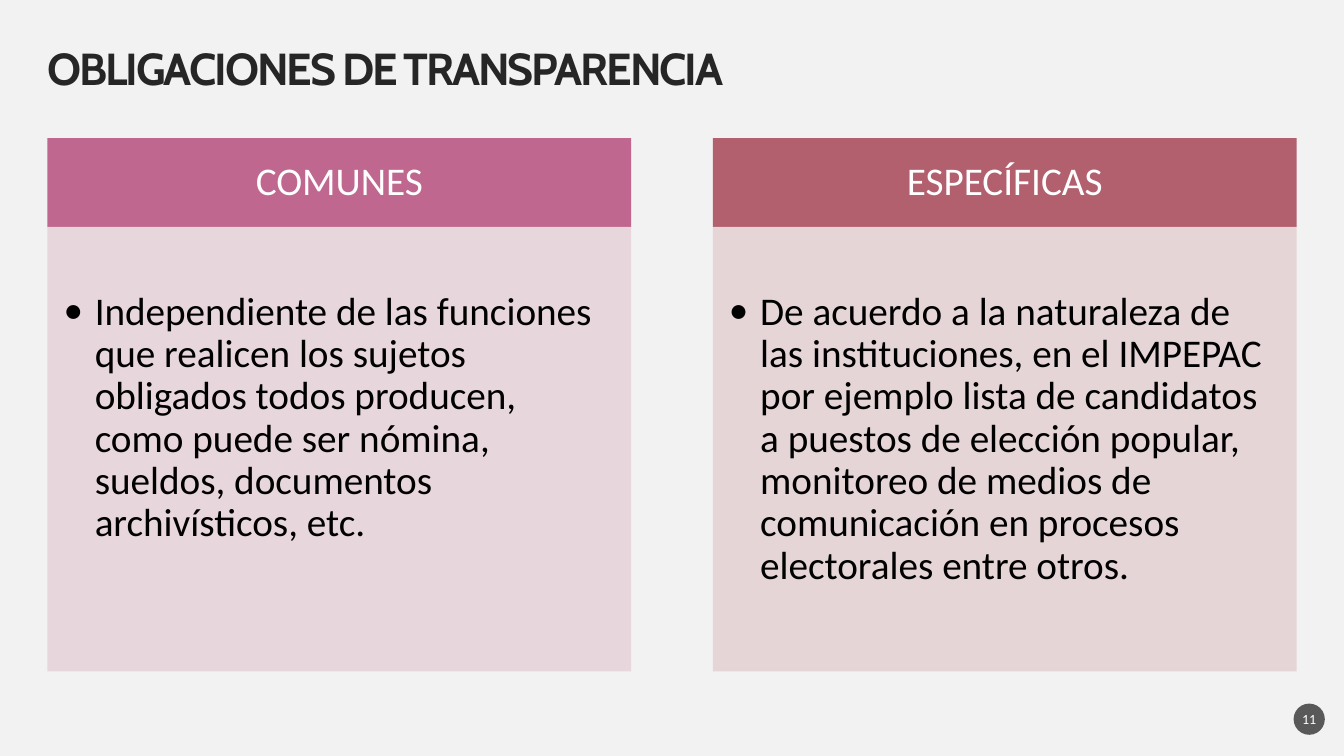
from pptx import Presentation
from pptx.dml.color import RGBColor
from pptx.enum.shapes import MSO_SHAPE as SHAPE
from pptx.enum.text import MSO_ANCHOR as ANCHOR, MSO_AUTO_SIZE as AUTO, PP_ALIGN as ALIGN
from pptx.oxml.ns import qn
from pptx.util import Inches, Pt
from lxml.etree import SubElement

COLORS = {
    "bg": "F2F2F2", "title": "262626", "white": "FFFFFF", "text": "000000",
    "badge": "595959", "pink": "BF678E", "pink_light": "E8D3DB",
    "red": "B2606E", "red_light": "E4D2D5",
}

# Grid: two columns, a title row, a header row and a body row
LEFT, COL_W, PITCH = 0.47, 5.79, 6.6
TITLE_ROW, HEAD_ROW, BODY_ROW = (0.47, 0.47), (1.37, 0.88), (2.25, 4.41)

PANELS = [
    ("COMUNES", "pink",
     "Independiente de las funciones que realicen los sujetos obligados todos "
     "producen, como puede ser nómina, sueldos, documentos archivísticos, etc."),
    ("ESPECÍFICAS", "red",
     "De acuerdo a la naturaleza de las instituciones, en el IMPEPAC por ejemplo "
     "lista de candidatos a puestos de elección popular, monitoreo de medios de "
     "comunicación en procesos electorales entre otros."),
]


class Deck:
    def __init__(self):
        self.prs = Presentation()
        self.prs.slide_width, self.prs.slide_height = Inches(13.33), Inches(7.5)
        # The Comparison layout holds a title and two header/body pairs
        self.slide = self.prs.slides.add_slide(self.prs.slide_layouts[4])
        self.holders = {h.placeholder_format.idx: h for h in self.slide.placeholders}
        self.fill(self.slide.background, "bg")

    def fill(self, sp, color, alpha=None):
        fill = sp.fill
        fill.solid()
        fill.fore_color.rgb = RGBColor.from_string(COLORS[color])
        if alpha is not None:
            clr = sp._element.spPr.find(f".//{qn('a:srgbClr')}")
            SubElement(clr, qn("a:alpha")).set("val", str(alpha * 1000))

    def place(self, sp, col, row, width=COL_W):
        sp.left, sp.width = Inches(LEFT + col * PITCH), Inches(width)
        sp.top, sp.height = (Inches(v) for v in row)

    def set_text(self, sp, text, size, color, font="Calibri", bold=False, align=ALIGN.LEFT,
                 anchor=ANCHOR.MIDDLE, insets=(0, 0, 0, 0), spacing=0.9):
        tf = sp.text_frame
        tf.text = text
        tf.word_wrap, tf.auto_size, tf.vertical_anchor = True, AUTO.NONE, anchor
        tf.margin_left, tf.margin_top, tf.margin_right, tf.margin_bottom = map(Inches, insets)
        p = tf.paragraphs[0]
        p.alignment, p.line_spacing, p.space_before = align, spacing, Pt(0)
        r = p.runs[0]
        r.font.name, r.font.size, r.font.bold = font, Pt(size), bold
        r.font.color.rgb = RGBColor.from_string(COLORS[color])
        return p

    def title(self, text):
        sp = self.slide.shapes.title
        self.place(sp, 0, TITLE_ROW, PITCH + COL_W)
        p = self.set_text(sp, text, 32, "title", font="Cabin", bold=True)
        p.runs[0]._r.get_or_add_rPr().set("spc", "-150")

    def header(self, idx, col, text, color):
        sp = self.holders[idx]
        self.place(sp, col, HEAD_ROW)
        self.fill(sp, color)
        self.set_text(sp, text, 28, "white", align=ALIGN.CENTER,
                      insets=(0.22, 0.12, 0.22, 0.12))

    def body(self, idx, col, text, color):
        sp = self.holders[idx]
        self.place(sp, col, BODY_ROW)
        self.fill(sp, color, alpha=90)
        p = self.set_text(sp, text, 28, "text", anchor=ANCHOR.TOP,
                          insets=(0.16, 0.64, 0.22, 0.24))
        pPr = p._p.get_or_add_pPr()
        pPr.set("marL", str(Inches(0.31)))
        pPr.set("indent", str(-Inches(0.31)))
        SubElement(pPr, qn("a:buFont")).set("typeface", "Calibri")
        SubElement(pPr, qn("a:buChar")).set("char", "•")

    def page_badge(self, number):
        sp = self.slide.shapes.add_shape(
            SHAPE.OVAL, Inches(12.83), Inches(6.98), Inches(0.31), Inches(0.31))
        sp.shadow.inherit = False
        self.fill(sp, "badge")
        sp.line.fill.background()
        self.set_text(sp, number, 10, "white", align=ALIGN.CENTER, spacing=1.0)


def main():
    deck = Deck()
    deck.title("OBLIGACIONES DE TRANSPARENCIA")

    # One header and one list per column
    for col, (heading, color, text) in enumerate(PANELS):
        deck.header(2 * col + 1, col, heading, color)
        deck.body(2 * col + 2, col, text, f"{color}_light")

    deck.page_badge("11")
    deck.prs.save("out.pptx")


if __name__ == "__main__":
    main()
